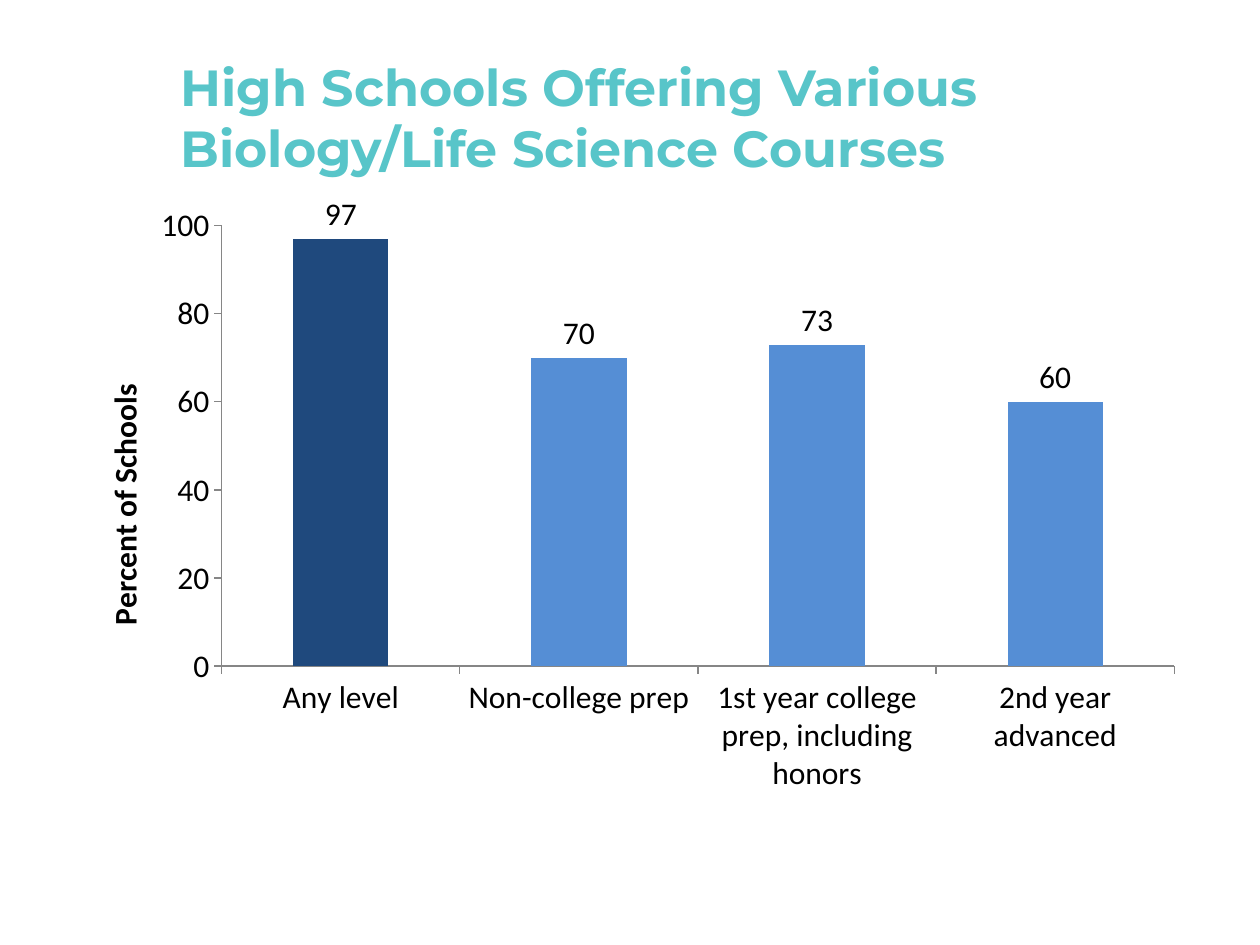
"""Build a slide with a column chart of high school biology course offerings."""
from dataclasses import dataclass

from lxml import etree
from pptx import Presentation
from pptx import util as u
from pptx.chart import data as chart_data
from pptx.dml.color import RGBColor
from pptx.enum import chart as chart_enum
from pptx.enum import text
from pptx.oxml import ns


@dataclass(frozen=True)
class Theme:
    """Colours, fonts and type sizes of the slide."""

    teal: str = "58C5C9"
    navy: str = "1F497D"
    blue: str = "558ED5"
    grey: str = "868686"
    black: str = "000000"
    title_font: str = "Montserrat"
    chart_font: str = "Calibri"
    title_size: int = 29
    chart_size: int = 18


THEME = Theme()
PX_PER_INCH = 126
COURSES = {
    "Any level": 97,
    "Non-college prep": 70,
    "1st year college prep, including honors": 73,
    "2nd year advanced": 60,
}


def px(length):
    """Turn whole pixels into EMU."""
    return u.Emu(round(length * u.Inches(1) / PX_PER_INCH))


def style_font(font, name, size, color, bold=False):
    """Set the typeface, size, colour and weight of a font."""
    font.name = name
    font.size = u.Pt(size)
    font.bold = bold
    font.color.rgb = RGBColor.from_string(color)


def fill_solid(part, color):
    """Fill a chart part with one colour."""
    part.format.fill.solid()
    part.format.fill.fore_color.rgb = RGBColor.from_string(color)


def set_layout(element, index, **fractions):
    """Place a chart element by fractions of the chart area."""
    for old in element.findall(ns.qn("c:layout")):
        element.remove(old)
    layout = etree.Element(ns.qn("c:layout"))
    manual = etree.SubElement(layout, ns.qn("c:manualLayout"))
    settings = {"xMode": "edge", "yMode": "edge", **fractions}
    if "w" in fractions:
        settings = {"layoutTarget": "inner", **settings}
    for tag, value in settings.items():
        etree.SubElement(manual, ns.qn(f"c:{tag}"), val=str(value))
    element.insert(index, layout)


def add_title(slide, wording, left, top, width, height):
    """Fill and place the title placeholder."""
    title = slide.shapes.title
    title.left, title.top, title.width, title.height = map(px, (left, top, width, height))
    frame = title.text_frame
    frame.word_wrap = True
    frame.auto_size = text.MSO_AUTO_SIZE.NONE
    frame.vertical_anchor = text.MSO_ANCHOR.MIDDLE
    paragraph = frame.paragraphs[0]
    paragraph.alignment = text.PP_ALIGN.LEFT
    run = paragraph.add_run()
    run.text = wording
    style_font(run.font, THEME.title_font, THEME.title_size, THEME.teal, bold=True)


def style_axis(axis):
    """Give an axis a thin grey line with outside ticks and no gridlines."""
    axis.has_major_gridlines = False
    axis.major_tick_mark = chart_enum.XL_TICK_MARK.OUTSIDE
    axis.minor_tick_mark = chart_enum.XL_TICK_MARK.NONE
    axis.format.line.width = u.Pt(0.75)
    axis.format.line.color.rgb = RGBColor.from_string(THEME.grey)


def style_value_axis(axis, wording):
    """Scale the value axis and title it."""
    axis.minimum_scale, axis.maximum_scale, axis.major_unit = 0, 100, 20
    paragraph = axis.axis_title.text_frame.paragraphs[0]
    run = paragraph.add_run()
    run.text = wording
    style_font(run.font, THEME.chart_font, THEME.chart_size, THEME.black, bold=True)
    set_layout(axis.axis_title.element, 1, x=0.03, y=0.3)


def style_columns(plot):
    """Colour the columns, highlight the first and label the values."""
    plot.gap_width = 150
    plot.vary_by_categories = False
    series = plot.series[0]
    series.invert_if_negative = False
    fill_solid(series, THEME.blue)
    fill_solid(series.points[0], THEME.navy)
    labels = series.data_labels
    labels.show_value = True
    labels.position = chart_enum.XL_LABEL_POSITION.OUTSIDE_END
    style_font(labels.font, THEME.chart_font, THEME.chart_size, THEME.black)


def add_course_chart(slide, left, top, width, height):
    """Add the column chart of course offerings."""
    courses = chart_data.CategoryChartData()
    courses.categories = list(COURSES)
    courses.add_series("Series 1", list(COURSES.values()))
    frame = slide.shapes.add_chart(
        chart_enum.XL_CHART_TYPE.COLUMN_CLUSTERED,
        *map(px, (left, top, width, height)), courses)
    chart = frame.chart
    chart.has_legend = False
    chart.has_title = False
    style_font(chart.font, THEME.chart_font, THEME.chart_size, THEME.black)
    for axis in (chart.category_axis, chart.value_axis):
        style_axis(axis)
    style_value_axis(chart.value_axis, "Percent of Schools")
    style_columns(chart.plots[0])
    plot_area = chart.element.find(".//" + ns.qn("c:plotArea"))
    set_layout(plot_area, 0, x=0.14, y=0.05, w=0.84, h=0.72)


def main():
    """Build and save the presentation."""
    presentation = Presentation()
    presentation.slide_width, presentation.slide_height = px(1260), px(945)
    slide = presentation.slides.add_slide(presentation.slide_layouts.get_by_name("Title Only"))
    add_course_chart(slide, 63, 195, 1134, 612)
    add_title(slide, "High Schools Offering Various Biology/Life Science Courses",
              168, 38, 1029, 158)
    presentation.save("out.pptx")


if __name__ == "__main__":
    main()
